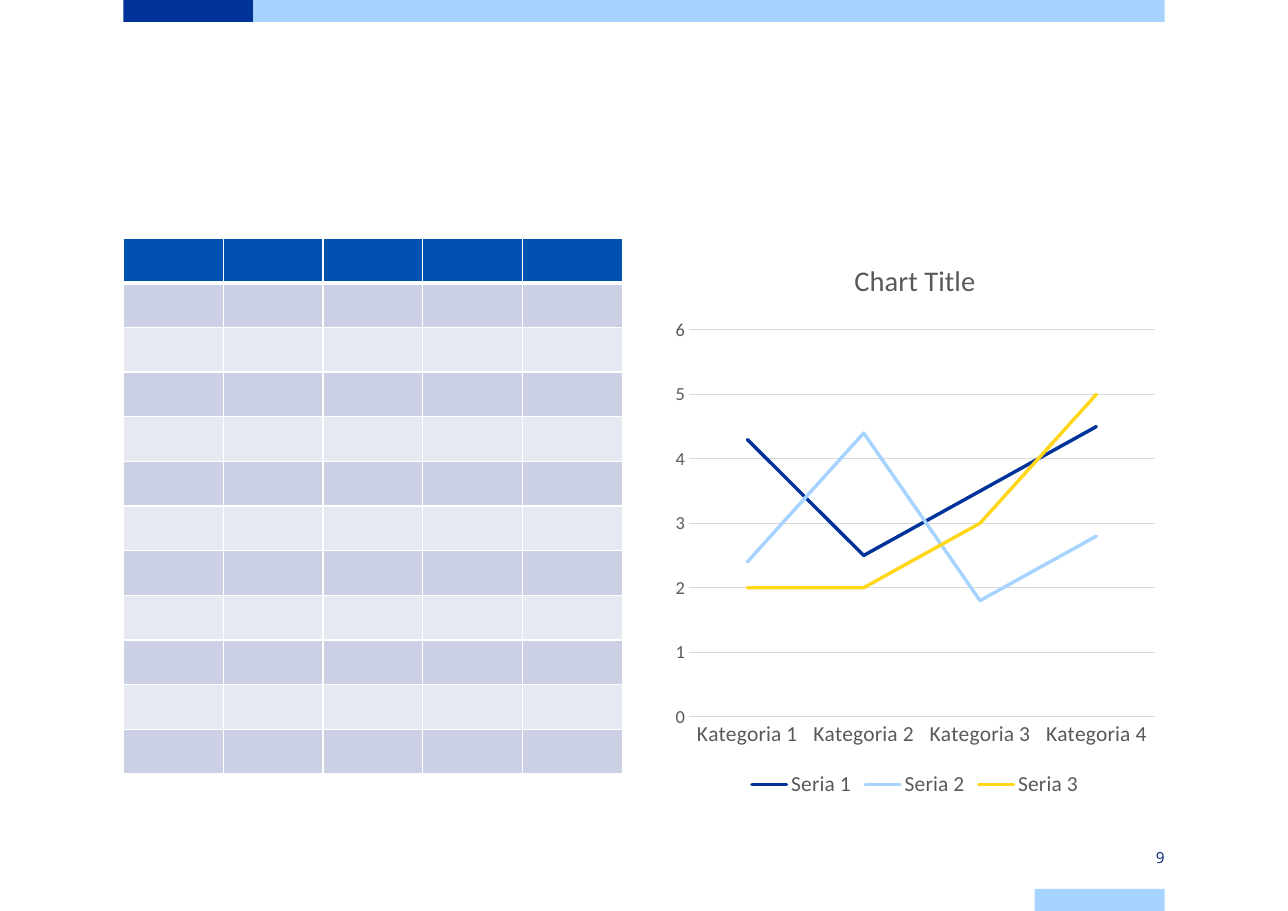
from lxml.etree import SubElement
from pptx import Presentation
from pptx.chart.data import CategoryChartData as ChartData
from pptx.dml.color import RGBColor
from pptx.enum.chart import XL_CHART_TYPE as ChartType
from pptx.enum.chart import XL_LEGEND_POSITION as LegendPosition
from pptx.enum.chart import XL_TICK_MARK as TickMark
from pptx.enum.shapes import MSO_SHAPE as Shape
from pptx.enum.text import MSO_ANCHOR as Anchor
from pptx.enum.text import PP_ALIGN as Align
from pptx.oxml.ns import qn
from pptx.util import Pt

SCALE = 9144
NAVY, SKY, YELLOW = "003399", "A6D3FF", "FFD618"
GREY, RULE = "595959", "D9D9D9"
HEADER, BAND_DARK, BAND_LIGHT = "0051B0", "CCD0E4", "E7E9F2"

CATEGORIES = [f"Kategoria {number}" for number in range(1, 5)]
SERIES = [
    ("Seria 1", (4.3, 2.5, 3.5, 4.5), NAVY),
    ("Seria 2", (2.4, 4.4, 1.8, 2.8), SKY),
    ("Seria 3", (2, 2, 3, 5), YELLOW),
]


def px(*lengths):
    """Turn lengths of a hundredth of an inch into EMU."""
    return [length * SCALE for length in lengths]


def paint(target, color):
    """Give a fill one solid colour."""
    target.solid()
    target.fore_color.rgb = RGBColor.from_string(color)


def style_font(font, size, color, name="Calibri"):
    """Set the face, size and colour of a font."""
    font.name, font.size, font.bold = name, Pt(size), False
    font.color.rgb = RGBColor.from_string(color)


def style_line(line, color, width):
    """Set the colour and width of a line."""
    line.color.rgb = RGBColor.from_string(color)
    line.width = Pt(width)


def add_bar(page, box, color):
    """Place one plain coloured bar."""
    bar = page.shapes.add_shape(Shape.RECTANGLE, *px(*box))
    bar.shadow.inherit = False
    bar.line.fill.background()
    paint(bar.fill, color)


def add_frame(page, box):
    """Place the top band and the lower corner bar at the edges of the box."""
    left, top, width, height = box
    accent, thickness = 118, 20
    add_bar(page, (left, top, accent, thickness), NAVY)
    add_bar(page, (left + accent, top, width - accent, thickness), SKY)
    add_bar(page, (left + width - accent, top + height - thickness, accent, thickness), SKY)


def style_cell(cell, color, edges):
    """Give a cell white borders of the listed widths and a fill."""
    properties = cell._tc.get_or_add_tcPr()
    for side, width in edges.items():
        line = SubElement(properties, qn(f"a:ln{side}"), w=str(Pt(width)))
        solid = SubElement(line, qn("a:solidFill"))
        SubElement(solid, qn("a:srgbClr"), val="FFFFFF")
    paint(cell.fill, color)


def add_grid(page, box, rows=12, columns=5):
    """Place the empty banded table with a header row."""
    table = page.shapes.add_table(rows, columns, *px(*box)).table
    for index, row in enumerate(table.rows):
        color = BAND_DARK if index % 2 else BAND_LIGHT
        edges = {"L": 1, "R": 1, "T": 3 if index == 1 else 1, "B": 1}
        if index == 0:
            color = HEADER
            edges["B"] = 3
        for cell in row.cells:
            style_cell(cell, color, edges)


def style_axes(chart):
    """Format the category axis, the value axis and the gridlines."""
    across, upward = chart.category_axis, chart.value_axis
    for axis, size in ((across, 14), (upward, 12)):
        axis.major_tick_mark = axis.minor_tick_mark = TickMark.NONE
        style_font(axis.tick_labels.font, size, GREY)
    style_line(across.format.line, RULE, 0.75)
    upward.format.line.fill.background()
    upward.minimum_scale, upward.maximum_scale, upward.major_unit = 0, 6, 1
    style_line(upward.major_gridlines.format.line, RULE, 0.75)


def add_line_chart(page, box):
    """Place the line chart with its title and legend."""
    data = ChartData()
    data.categories = CATEGORIES
    for name, values, color in SERIES:
        data.add_series(name, values)
    chart = page.shapes.add_chart(ChartType.LINE, *px(*box), data).chart
    style_font(chart.font, 10, "000000")
    title = chart.chart_title
    title.text_frame.text = "Chart Title"
    title.include_in_layout = False
    style_font(title.text_frame.paragraphs[0].runs[0].font, 18.6, GREY)
    chart.has_legend = True
    chart.legend.position = LegendPosition.BOTTOM
    chart.legend.include_in_layout = False
    style_font(chart.legend.font, 14, GREY)
    style_axes(chart)
    chart.plots[0].vary_by_categories = False
    for series, (name, values, color) in zip(chart.plots[0].series, SERIES):
        series.smooth = False
        style_line(series.format.line, color, 2.25)
        series.format.line._ln.set("cap", "rnd")


def add_page_number(page, box):
    """Place the page number against the right edge of the box."""
    frame = page.shapes.add_textbox(*px(*box)).text_frame
    frame.word_wrap = True
    frame.vertical_anchor = Anchor.MIDDLE
    frame.margin_left = frame.margin_right = 0
    frame.margin_top = frame.margin_bottom = px(8)[0]
    frame.text = "9"
    para = frame.paragraphs[0]
    para.alignment = Align.RIGHT
    style_font(para.runs[0].font, 10, "002073", "Open Sans")


def main():
    """Build the slide and save the deck."""
    deck = Presentation()
    deck.slide_width, deck.slide_height = px(1169, 827)
    page = deck.slides.add_slide(deck.slide_layouts[6])
    add_frame(page, (112, 0, 945, 827))
    add_grid(page, (112, 216, 453, 486))
    add_line_chart(page, (604, 216, 453, 512))
    add_page_number(page, (939, 768, 118, 20))
    deck.save("out.pptx")


if __name__ == "__main__":
    main()
